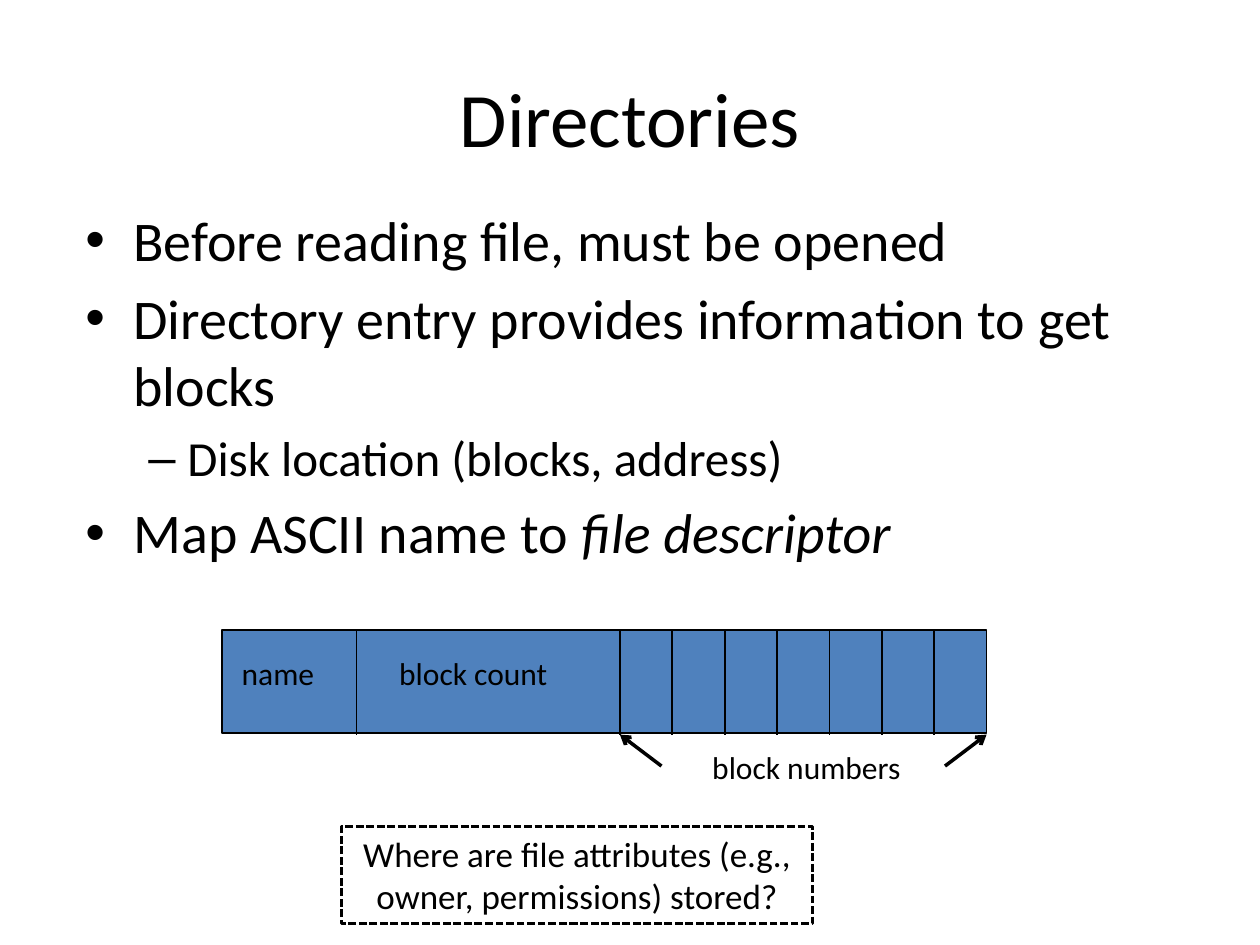
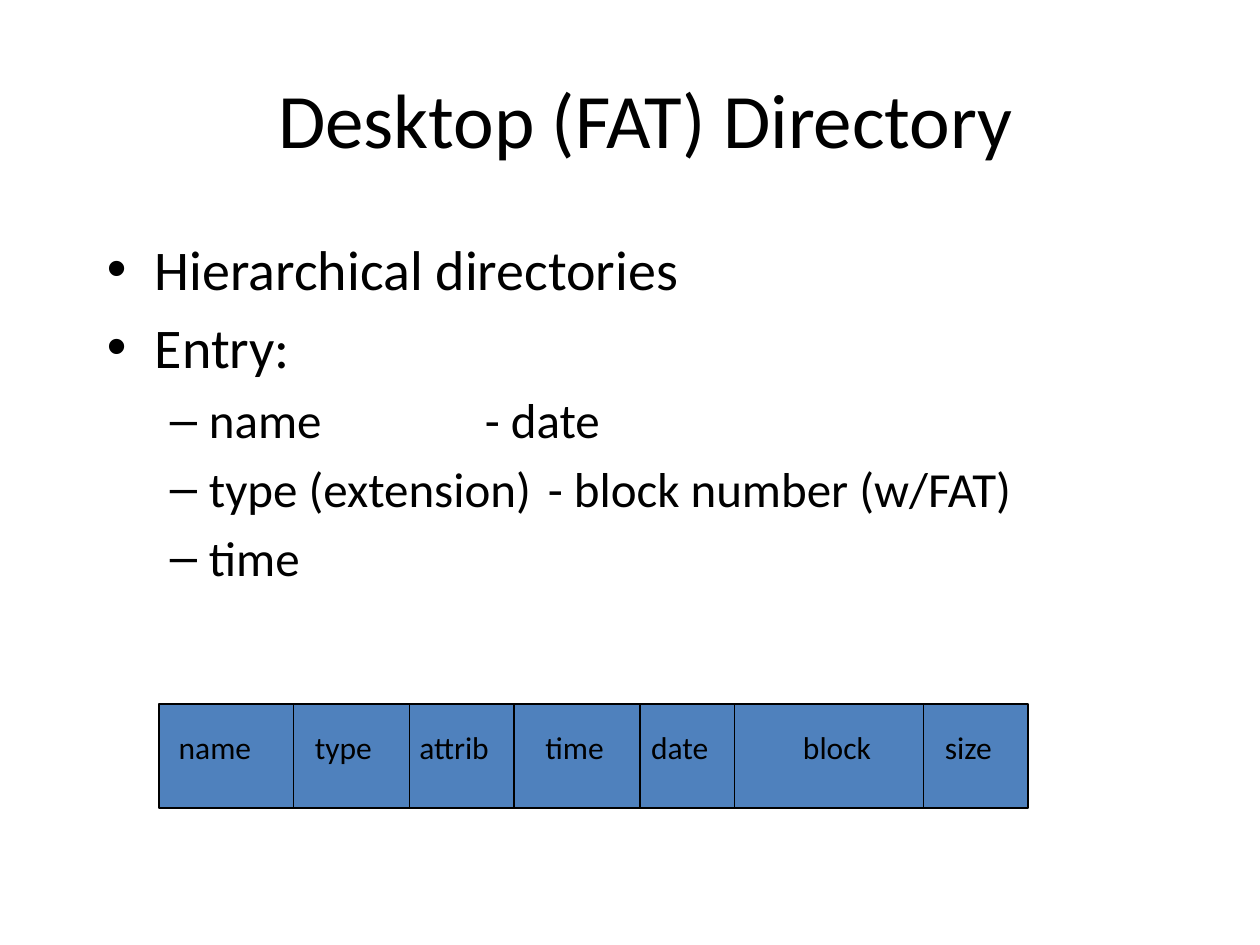
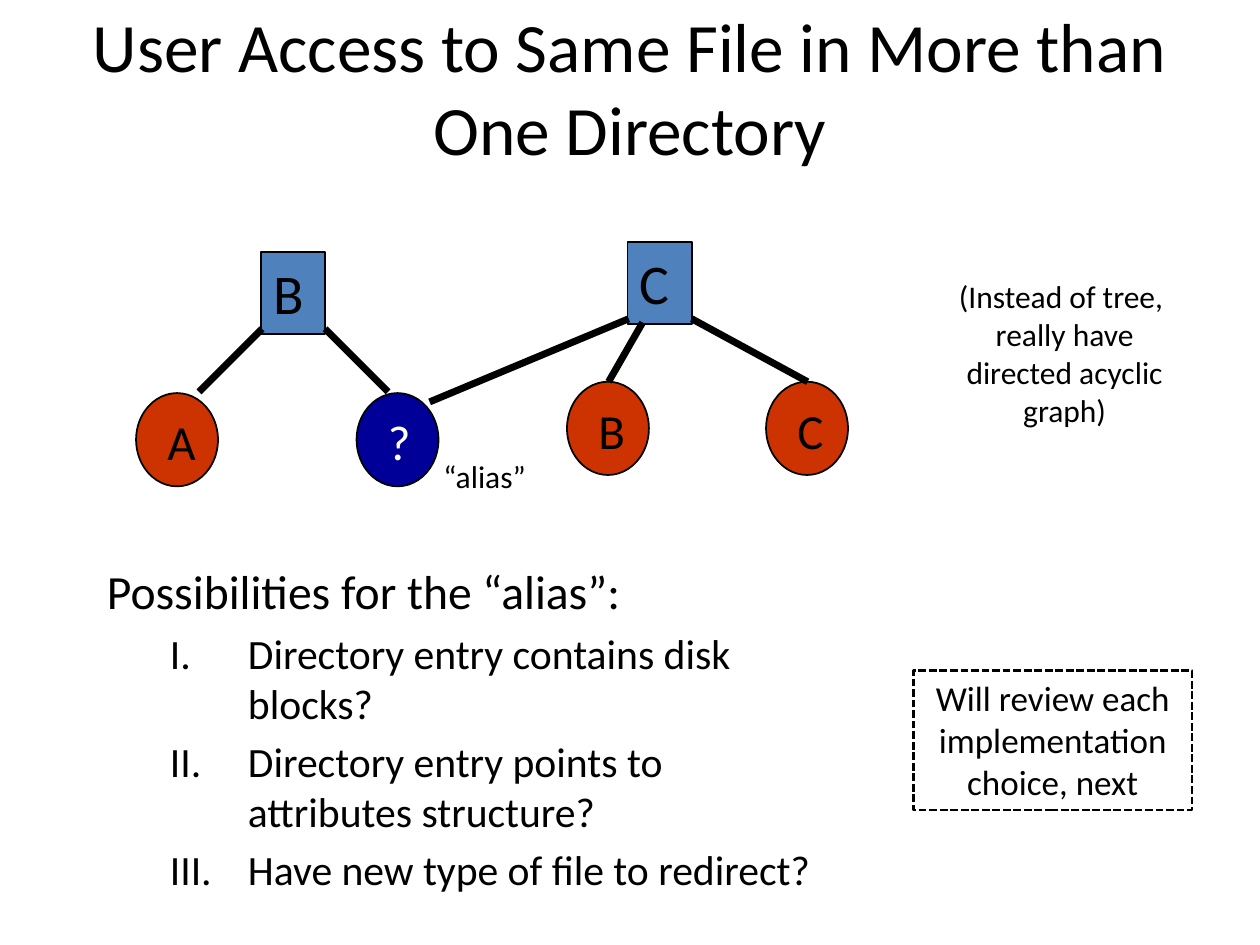
from dataclasses import dataclass

from lxml import etree
from pptx import Presentation
from pptx.dml.color import RGBColor
from pptx.enum.dml import MSO_LINE
from pptx.enum.shapes import MSO_CONNECTOR, MSO_SHAPE
from pptx.enum.text import MSO_ANCHOR, MSO_AUTO_SIZE, PP_ALIGN
from pptx.oxml.ns import qn
from pptx.util import Inches, Pt

BLACK = RGBColor(0x00, 0x00, 0x00)
WHITE = RGBColor(0xFF, 0xFF, 0xFF)
BLUE = RGBColor(0x4F, 0x81, 0xBD)
RED = RGBColor(0xCC, 0x33, 0x00)
NAVY = RGBColor(0x00, 0x00, 0x99)
FONT = "Calibri"
LEFT, CENTER = PP_ALIGN.LEFT, PP_ALIGN.CENTER
TOP, MIDDLE = MSO_ANCHOR.TOP, MSO_ANCHOR.MIDDLE
GROW = MSO_AUTO_SIZE.SHAPE_TO_FIT_TEXT
RECT, OVAL = MSO_SHAPE.RECTANGLE, MSO_SHAPE.OVAL
STRAIGHT = MSO_CONNECTOR.STRAIGHT
DASH = MSO_LINE.SQUARE_DOT
ROMAN = "romanUcPeriod"
STRIP_HIGH = 0.82


@dataclass(frozen=True)
class Box:
    left: float
    top: float
    width: float
    height: float

    def lengths(self) -> list:
        return [Inches(v) for v in (self.left, self.top, self.width, self.height)]


@dataclass(frozen=True)
class Point:
    """One paragraph of a body; a mark is a bullet sign or a numbering scheme."""
    text: str
    size: float = 32
    mark: str = "•"
    level: int = 0
    margin: float = 0.38
    hang: float = 0.38
    italic: str = ""


@dataclass(frozen=True)
class Label:
    text: str
    left: float
    width: float
    align: PP_ALIGN = LEFT


@dataclass(frozen=True)
class Node:
    text: str
    left: float
    top: float
    fill: RGBColor
    color: RGBColor = BLACK


def dash(text: str) -> Point:
    return Point(text, 28, "–", 1, 0.81, 0.31)


def choice(text: str) -> Point:
    return Point(text, 23.8, ROMAN, 1, 1.12, 0.62)


def add_run(para, text: str, size: float, color=BLACK, italic=False) -> None:
    run = para.add_run()
    run.text = text
    font = run.font
    font.name, font.size, font.color.rgb = FONT, Pt(size), color
    if italic:
        font.italic = True


def write(shape, text: str, *, size=18, color=BLACK, align=LEFT,
          anchor=TOP, wrap=True) -> None:
    """Fill a shape with text, one paragraph for each line."""
    frame = shape.text_frame
    frame.word_wrap, frame.vertical_anchor = wrap, anchor
    if not wrap:
        frame.auto_size = GROW
    for i, line in enumerate(text.split("\n")):
        para = frame.add_paragraph() if i else frame.paragraphs[0]
        para.alignment = align
        add_run(para, line, size, color)


def add_text(slide, box: Box, text: str, **look) -> None:
    write(slide.shapes.add_textbox(*box.lengths()), text, **look)


def add_title(slide, box: Box, text: str, size: float = 44) -> None:
    add_text(slide, box, text, size=size, align=CENTER, anchor=MIDDLE)


def add_body(slide, box: Box, points: list[Point]) -> None:
    frame = slide.shapes.add_textbox(*box.lengths()).text_frame
    frame.word_wrap = True
    for i, point in enumerate(points):
        para = frame.add_paragraph() if i else frame.paragraphs[0]
        para.level = point.level
        para.space_before = Pt(round(point.size * 0.2, 1))
        add_run(para, point.text, point.size)
        if point.italic:
            add_run(para, point.italic, point.size, italic=True)
        if point.mark:
            props = para._p.get_or_add_pPr()
            props.set("marL", str(Inches(point.margin)))
            props.set("indent", str(-Inches(point.hang)))
            if point.mark == ROMAN:
                etree.SubElement(props, qn("a:buAutoNum"), type=ROMAN)
            else:
                etree.SubElement(props, qn("a:buFont"), typeface="Arial")
                etree.SubElement(props, qn("a:buChar"), char=point.mark)


def add_shape(slide, kind, box: Box, fill=None, weight: float = 1):
    shape = slide.shapes.add_shape(kind, *box.lengths())
    shape.shadow.inherit = False
    if fill is None:
        shape.fill.background()
    else:
        shape.fill.solid()
        shape.fill.fore_color.rgb = fill
    shape.line.color.rgb, shape.line.width = BLACK, Pt(weight)
    return shape


def add_line(slide, start: tuple, end: tuple, weight: float = 1,
             arrow: bool = False) -> None:
    ends = [Inches(v) for v in (*start, *end)]
    link = slide.shapes.add_connector(STRAIGHT, *ends)
    link.line.color.rgb, link.line.width = BLACK, Pt(weight)
    props = link._element.spPr
    if arrow:
        etree.SubElement(props.find(qn("a:ln")), qn("a:tailEnd"), type="arrow")
    etree.SubElement(props, qn("a:effectLst"))


def add_note(slide, box: Box, text: str) -> None:
    note = add_shape(slide, RECT, box, weight=1.5)
    note.line.dash_style = DASH
    write(note, text, size=20, align=CENTER)


def add_strip(slide, left: float, top: float, width: float,
              cuts: list[float], labels: list[Label]) -> None:
    """Draw a directory entry as a bar cut into labelled fields."""
    add_shape(slide, RECT, Box(left, top, width, STRIP_HIGH), BLUE)
    for x in cuts:
        add_line(slide, (x, top), (x, top + STRIP_HIGH + 0.01))
    for label in labels:
        add_text(slide, Box(label.left, top + 0.14, label.width, 0.5),
                 label.text, align=label.align, wrap=label.align == CENTER)


def draw_entry(slide) -> None:
    add_title(slide, Box(0.5, 0.3, 9, 1.25), "Directories")
    add_body(slide, Box(0.58, 1.58, 9, 4.66), [
        Point("Before reading file, must be opened"),
        Point("Directory entry provides information to get blocks"),
        dash("Disk location (blocks, address)"),
        Point("Map ASCII name to ", italic="file descriptor"),
    ])
    first, last, count = 4.92, 7.83, 7
    blocks = [first + (last - first) / count * i for i in range(count)]
    add_strip(slide, 1.76, 5, 6.07, [2.83, *blocks],
              [Label("name", 1.82, 0.92), Label("block count", 3.07, 1.76)])
    add_text(slide, Box(5.54, 5.89, 1.72, 0.4), "block numbers",
             align=CENTER, wrap=False)
    for start, end in ((first + 0.33, first), (last - 0.33, last)):
        add_line(slide, (start, 6.08), (end, 5.83), 2, arrow=True)
    add_note(slide, Box(2.71, 6.56, 3.74, 0.77),
             "Where are file attributes (e.g., owner, permissions) stored?")


def draw_fat(slide) -> None:
    add_title(slide, Box(0.75, 0.31, 8.75, 1.25), "Desktop (FAT) Directory")
    add_body(slide, Box(0.75, 1.81, 8.5, 3.02), [
        Point("Hierarchical directories"),
        Point("Entry:"),
        dash("name\t\t\t- date"),
        dash("type (extension)\t- block number (w/FAT)"),
        dash("time"),
    ])
    add_strip(slide, 1.26, 5.59, 6.9, [2.33, 3.25, 4.08, 5.08, 5.83, 7.33], [
        Label("name", 1.32, 0.92),
        Label("type", 2.4, 0.78),
        Label("attrib", 3.23, 0.9),
        Label("time", 4.23, 0.79),
        Label("date", 5.07, 0.76),
        Label(" block", 5.9, 1.43, CENTER),
        Label("size", 7.4, 0.72),
    ])


def draw_alias(slide) -> None:
    add_title(slide, Box(0.25, 0.06, 9.5, 1.25),
              "User Access to Same File in More than One Directory", 39.6)
    add_body(slide, Box(0.75, 4.41, 5.83, 2.75), [
        Point("Possibilities for the “alias”:", 27.2, mark=""),
        choice("Directory entry contains disk blocks?"),
        choice("Directory entry points to attributes structure?"),
        choice("Have new type of file to redirect?"),
    ])
    for node in (Node("B", 2.07, 2, BLUE), Node("C", 4.98, 1.92, BLUE)):
        folder = add_shape(slide, RECT, Box(node.left, node.top, 0.51, 0.65),
                           node.fill)
        write(folder, node.text, size=32, wrap=False)
    files = (
        Node("A", 1.08, 3.12, RED),
        Node("?", 2.83, 3.12, NAVY, WHITE),
        Node("B", 4.5, 3.03, RED),
        Node("C", 6.08, 3.03, RED),
    )
    for node in files:
        add_shape(slide, OVAL, Box(node.left, node.top, 0.65, 0.74), node.fill)
        add_text(slide, Box(node.left + 0.15, node.top + 0.1, 0.43, 0.57),
                 node.text, size=28, color=node.color, wrap=False)
    links = (
        ((2.58, 2.61), (3.08, 3.11)),
        ((2.08, 2.61), (1.58, 3.11)),
        ((5.1, 2.56), (4.83, 3.03)),
        ((5.49, 2.53), (6.41, 3.03)),
        ((4.99, 2.53), (3.41, 3.19)),
    )
    for start, end in links:
        add_line(slide, start, end, 4)
    add_text(slide, Box(7.5, 2.15, 1.9, 1.31),
             "(Instead of tree, \nreally have\ndirected acyclic\ngraph)",
             align=CENTER, wrap=False)
    add_text(slide, Box(3.42, 3.58, 1.11, 0.5), "“alias”", wrap=False)
    add_note(slide, Box(7.25, 5.32, 2.21, 1.11),
             "Will review each implementation choice, next")


def main() -> None:
    deck = Presentation()
    deck.slide_width, deck.slide_height = Inches(10), Inches(7.5)
    blank = deck.slide_layouts[6]
    for draw in (draw_entry, draw_fat, draw_alias):
        draw(deck.slides.add_slide(blank))
    deck.save("out.pptx")


if __name__ == "__main__":
    main()
